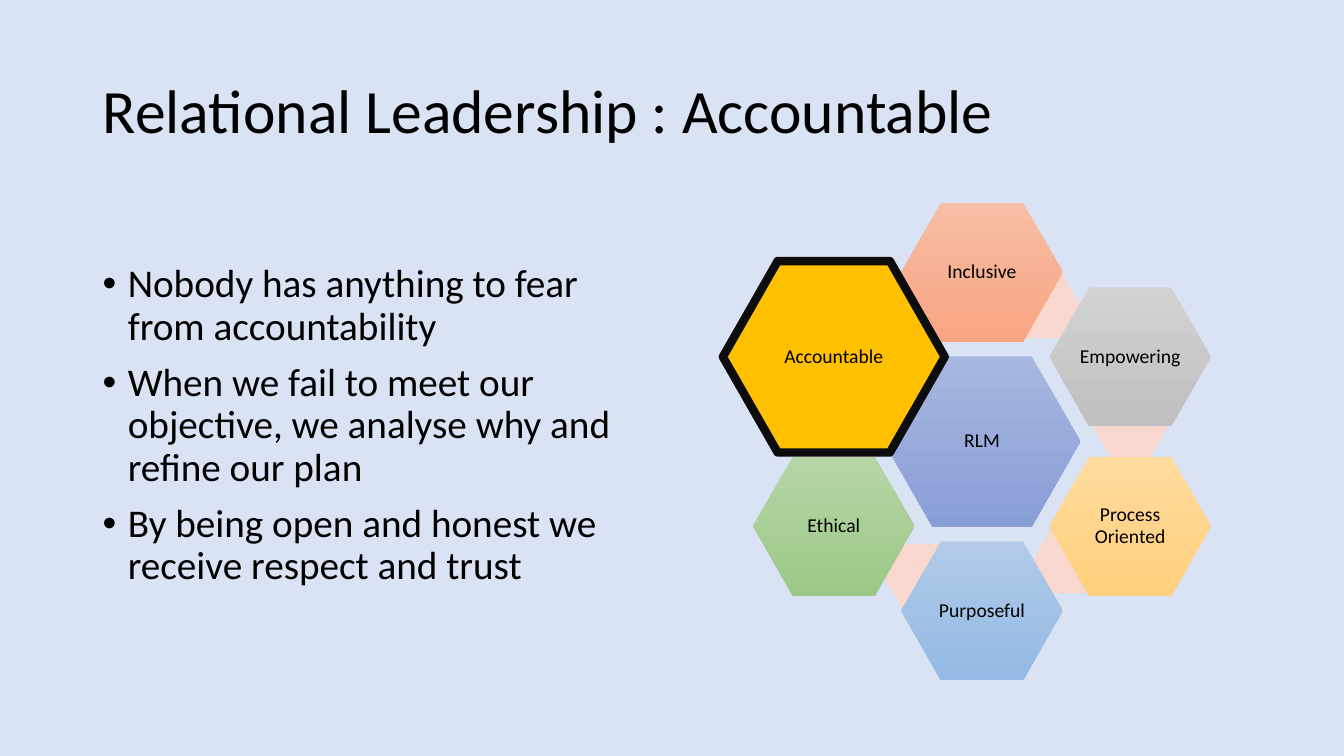
import pptx
import pptx.util
import pptx.dml.color
import pptx.enum.shapes
import pptx.enum.text
import lxml.etree

Inches = pptx.util.Inches
Pt = pptx.util.Pt
RGBColor = pptx.dml.color.RGBColor
ALIGN = pptx.enum.text.PP_ALIGN
MIDDLE = pptx.enum.text.MSO_ANCHOR.MIDDLE

FONT = "Calibri"
BLACK = RGBColor(0x00, 0x00, 0x00)
PALE = RGBColor(0xDA, 0xE3, 0xF3)
PINK = RGBColor(0xF8, 0xD7, 0xCE)
GOLD = RGBColor(0xFF, 0xC0, 0x00)
EDGE = RGBColor(0x0D, 0x0D, 0x0D)
BLUES = (RGBColor(0xA8, 0xB7, 0xDF), RGBColor(0x88, 0x9E, 0xD7))
CORALS = (RGBColor(0xF7, 0xBD, 0xA5), RGBColor(0xF8, 0xA5, 0x82))
GRAYS = (RGBColor(0xD2, 0xD2, 0xD2), RGBColor(0xC0, 0xC0, 0xC0))
AMBERS = (RGBColor(0xFF, 0xDB, 0x9E), RGBColor(0xFF, 0xD0, 0x7C))
SKIES = (RGBColor(0xB1, 0xCB, 0xE9), RGBColor(0x93, 0xB9, 0xE4))
GREENS = (RGBColor(0xB5, 0xD5, 0xA7), RGBColor(0x9C, 0xC9, 0x87))

MID_X, MID_Y = 9.74, 4.38
STEP_X, STEP_Y = 1.47, 0.84
CORE = (1.95, 1.69)
PETAL = (1.6, 1.38)
LINK = (0.74, 0.63)
FOCUS = (2.2, 1.9)

POINTS = [
    "Nobody has anything to fear from accountability",
    "When we fail to meet our objective, we analyse why and refine our plan",
    "By being open and honest we receive respect and trust",
]

PETALS = [
    ("Inclusive", 0, -2, CORALS, (10.35, 3.04)),
    ("Empowering", 1, -1, GRAYS, (11.21, 4.23)),
    ("Process Oriented", 1, 1, AMBERS, (10.61, 5.57)),
    ("Purposeful", 0, 2, SKIES, (9.13, 5.71)),
    ("Ethical", -1, 1, GREENS, (8.26, 4.52)),
]


def style(para, size):
    para.line_spacing = 0.9
    para.font.name = FONT
    para.font.size = Pt(size)
    para.font.color.rgb = BLACK


def add_title(slide, text):
    title = slide.shapes.title
    title.left, title.top = Inches(0.92), Inches(0.4)
    title.width, title.height = Inches(11.5), Inches(1.45)
    frame = title.text_frame
    frame.text = text
    frame.vertical_anchor = MIDDLE
    frame.paragraphs[0].alignment = ALIGN.LEFT
    style(frame.paragraphs[0], 44)


def add_list(slide, items):
    box = slide.shapes.add_textbox(
        Inches(0.92), Inches(2.57), Inches(5.67), Inches(4.19))
    frame = box.text_frame
    frame.word_wrap = True
    for index, item in enumerate(items):
        para = frame.add_paragraph() if index else frame.paragraphs[0]
        para.text = item
        props = para._p.get_or_add_pPr()
        props.set("marL", str(Inches(0.25)))
        props.set("indent", str(Inches(-0.25)))
        tag = pptx.oxml.ns.qn
        lxml.etree.SubElement(props, tag("a:buFont")).set("typeface", "Arial")
        lxml.etree.SubElement(props, tag("a:buChar")).set("char", "•")
        para.space_before = Pt(10 if index else 0)
        style(para, 28)


def add_hex(slide, center, size, colors, text=""):
    (x, y), (wide, high) = center, size
    kind = pptx.enum.shapes.MSO_SHAPE.HEXAGON
    cell = slide.shapes.add_shape(
        kind, Inches(x - wide / 2), Inches(y - high / 2),
        Inches(wide), Inches(high))
    cell.adjustments[0] = 0.286
    cell.shadow.inherit = False
    cell.line.fill.background()
    if len(colors) == 1:
        cell.fill.solid()
        cell.fill.fore_color.rgb = colors[0]
    else:
        cell.fill.gradient()
        cell.fill.gradient_angle = 270
        for stop, color in zip(cell.fill.gradient_stops, colors):
            stop.color.rgb = color
    if text:
        add_label(cell.text_frame, text)
    return cell


def add_label(frame, text):
    frame.word_wrap = True
    frame.vertical_anchor = MIDDLE
    frame.margin_left = frame.margin_right = Inches(0.02)
    frame.margin_top = frame.margin_bottom = Inches(0.02)
    frame.text = text
    frame.paragraphs[0].alignment = ALIGN.CENTER
    style(frame.paragraphs[0], 14)


def place(col, row):
    return MID_X + col * STEP_X, MID_Y + row * STEP_Y


def main():
    deck = pptx.Presentation()
    deck.slide_width, deck.slide_height = Inches(13.33), Inches(7.5)
    slide = deck.slides.add_slide(deck.slide_layouts[5])
    slide.background.fill.solid()
    slide.background.fill.fore_color.rgb = PALE
    add_title(slide, "Relational Leadership : Accountable")
    add_list(slide, POINTS)
    add_hex(slide, place(0, 0), CORE, BLUES, "RLM")
    for name, col, row, colors, link in PETALS:
        add_hex(slide, link, LINK, (PINK,))
        add_hex(slide, place(col, row), PETAL, colors, name)
    focus = add_hex(slide, place(-1, -1), FOCUS, (GOLD,), "Accountable")
    focus.line.color.rgb = EDGE
    focus.line.width = Pt(6)
    deck.save("out.pptx")


if __name__ == "__main__":
    main()
